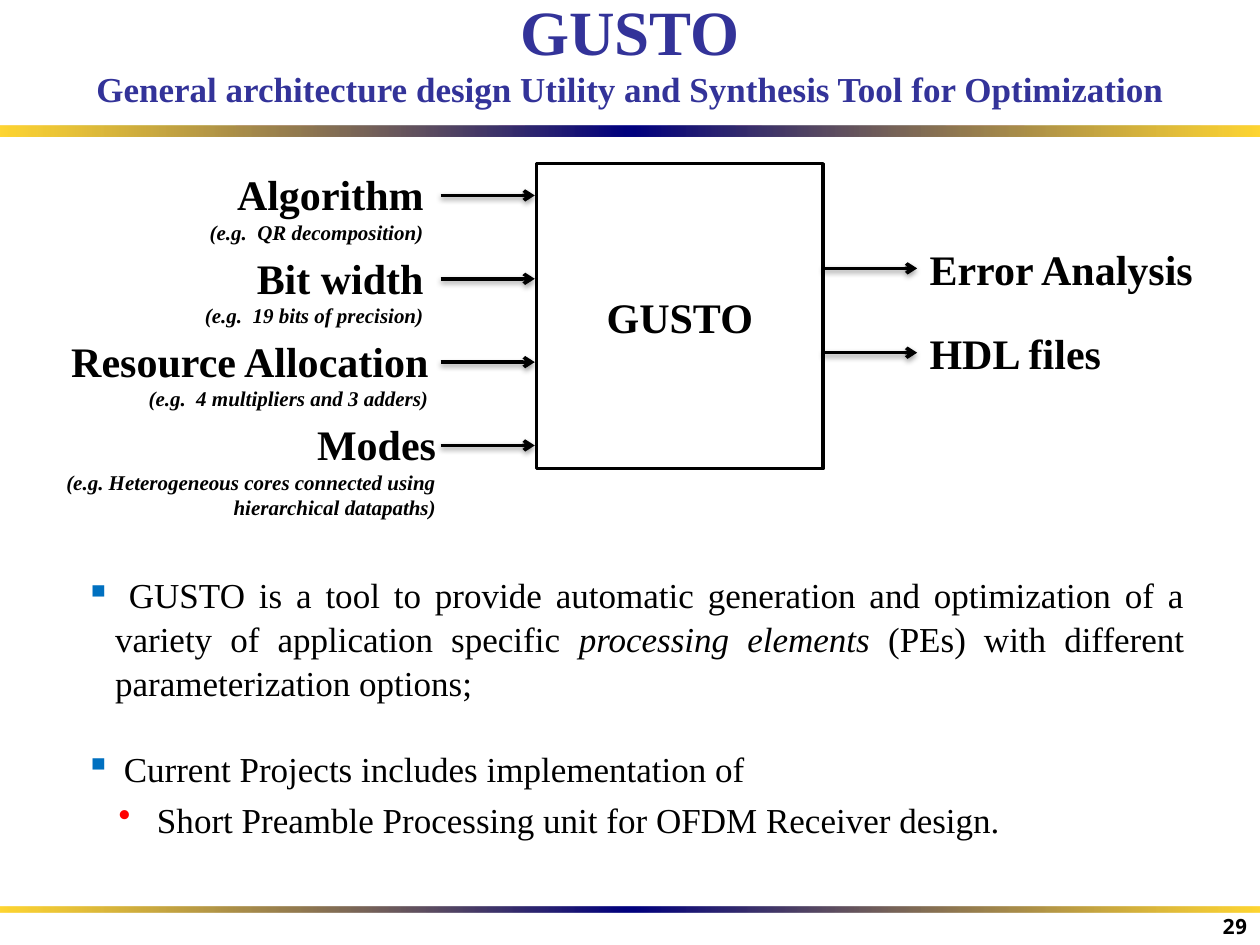
from dataclasses import dataclass

from lxml import etree
from pptx import Presentation
from pptx.dml.color import RGBColor
from pptx.enum.shapes import MSO_CONNECTOR, MSO_SHAPE
from pptx.enum.text import MSO_ANCHOR, MSO_AUTO_SIZE, PP_ALIGN
from pptx.oxml.ns import qn
from pptx.slide import Slide
from pptx.text.text import TextFrame, _Paragraph, _Run
from pptx.util import Cm, Pt

RECTANGLE = MSO_SHAPE.RECTANGLE
STRAIGHT = MSO_CONNECTOR.STRAIGHT
TOP, MIDDLE, BOTTOM = MSO_ANCHOR.TOP, MSO_ANCHOR.MIDDLE, MSO_ANCHOR.BOTTOM
LEFT, CENTER, RIGHT = PP_ALIGN.LEFT, PP_ALIGN.CENTER, PP_ALIGN.RIGHT
JUSTIFY = PP_ALIGN.JUSTIFY


@dataclass(frozen=True)
class Theme:
    font: str = "Times New Roman"
    number_font: str = "Noto Sans Mono"
    ink: str = "000000"
    paper: str = "FFFFFF"
    title: str = "333399"
    gold: str = "FFCC00"
    navy: str = "00007F"
    square_bullet: str = "0070C0"
    round_bullet: str = "FF0000"
    title_size: int = 36
    label_size: int = 24
    body_size: int = 20
    hint_size: int = 12


@dataclass(frozen=True)
class ToolInput:
    name: str
    hint: str
    right: float


@dataclass(frozen=True)
class Point:
    phrases: tuple[str, ...]  # every second phrase is italic
    bullet: str
    color: str
    margin: float
    space_before: float = 0


THEME = Theme()
SLIDE_WIDTH, SLIDE_HEIGHT = 25.4, 19.05
ARROW_LENGTH = 1.9
CORE_LEFT, CORE_TOP, CORE_WIDTH, CORE_HEIGHT = 10.82, 3.3, 5.77, 6.15
HANGING = 0.6

INPUTS = (
    ToolInput("Algorithm", "(e.g.  QR decomposition)", 8.79),
    ToolInput("Bit width", "(e.g.  19 bits of precision)", 8.79),
    ToolInput("Resource Allocation", "(e.g.  4 multipliers and 3 adders)", 8.89),
    ToolInput("Modes", "(e.g. Heterogeneous cores connected using "
              "hierarchical datapaths)", 9.04),
)
FIRST_INPUT, INPUT_PITCH, INPUT_WIDTH = 3.94, 1.68, 8.15
OUTPUTS = ("Error Analysis", "HDL files")
FIRST_OUTPUT, OUTPUT_PITCH = 5.41, 1.7

POINTS = (
    Point((" GUSTO is a tool to provide automatic generation and optimization "
           "of a variety of application specific ", "processing elements",
           " (PEs) with different parameterization options;"),
          "▪", THEME.square_bullet, 0.6),
    Point((" Current Projects includes implementation of",),
          "▪", THEME.square_bullet, 0.6, 23.7),
    Point((" Short Preamble Processing unit for OFDM Receiver design.",),
          "•", THEME.round_bullet, 1.27, 4),
)


def rgb(color: str) -> RGBColor:
    return RGBColor.from_string(color)


def style(run: _Run, size: int, color: str = THEME.ink, bold: bool = True,
          italic: bool = False, font: str = THEME.font) -> None:
    run.font.name, run.font.size = font, Pt(size)
    run.font.bold, run.font.italic = bold, italic
    run.font.color.rgb = rgb(color)


def add_text(slide: Slide, left: float, top: float, width: float, height: float,
             text: str, align: PP_ALIGN, anchor: MSO_ANCHOR = TOP) -> TextFrame:
    frame = slide.shapes.add_textbox(
        Cm(left), Cm(top), Cm(width), Cm(height)).text_frame
    frame.word_wrap = True
    frame.vertical_anchor = anchor
    frame.text = text
    for paragraph in frame.paragraphs:
        paragraph.alignment = align
    return frame


def add_color(parent: etree._Element, color: str, alpha: int) -> None:
    node = etree.SubElement(parent, qn("a:srgbClr"), val=color)
    etree.SubElement(node, qn("a:alpha"), val=str(alpha * 1000))


def add_band(slide: Slide, top: float, height: float) -> None:
    """Draw a full-width rule fading from gold to navy and back."""
    band = slide.shapes.add_shape(
        RECTANGLE, 0, Cm(top), Cm(SLIDE_WIDTH), Cm(height))
    band.shadow.inherit = False
    band.line.fill.background()
    band.fill.gradient()
    band.fill.gradient_angle = 0
    stops = band._element.spPr.find(".//" + qn("a:gsLst"))
    for stop in list(stops):
        stops.remove(stop)
    for position, color, alpha in ((0, THEME.gold, 80), (50, THEME.navy, 100),
                                   (100, THEME.gold, 80)):
        stop = etree.SubElement(stops, qn("a:gs"), pos=str(position * 1000))
        add_color(stop, color, alpha)


def add_arrow(slide: Slide, left: float, y: float) -> None:
    arrow = slide.shapes.add_connector(
        STRAIGHT, Cm(left), Cm(y), Cm(left + ARROW_LENGTH), Cm(y))
    arrow.line.color.rgb = rgb(THEME.ink)
    arrow.line.width = Pt(2)
    properties = arrow._element.spPr
    etree.SubElement(properties.find(qn("a:ln")), qn("a:tailEnd"), type="arrow")
    effects = etree.SubElement(properties, qn("a:effectLst"))
    shadow = etree.SubElement(
        effects, qn("a:outerShdw"), blurRad="40000", dist="20000",
        dir="5400000", rotWithShape="0")
    add_color(shadow, THEME.ink, 38)


def add_title(slide: Slide) -> None:
    title = slide.shapes.title
    title.left, title.top, title.width, title.height = (
        Cm(0.64), Cm(0.38), Cm(24.13), Cm(1.96))
    frame = title.text_frame
    frame.auto_size = MSO_AUTO_SIZE.NONE
    frame.vertical_anchor = BOTTOM
    frame.text = ("GUSTO\vGeneral architecture design Utility and "
                  "Synthesis Tool for Optimization")
    frame.paragraphs[0].alignment = CENTER
    for run, size in zip(frame.paragraphs[0].runs,
                         (THEME.title_size, THEME.body_size)):
        style(run, size, THEME.title)


def add_core(slide: Slide) -> None:
    core = slide.shapes.add_shape(RECTANGLE, Cm(CORE_LEFT), Cm(CORE_TOP),
                                  Cm(CORE_WIDTH), Cm(CORE_HEIGHT))
    core.shadow.inherit = False
    core.fill.solid()
    core.fill.fore_color.rgb = rgb(THEME.paper)
    core.line.color.rgb = rgb(THEME.ink)
    core.line.width = Pt(2)
    core.text_frame.text = "GUSTO"
    core.text_frame.vertical_anchor = MIDDLE
    core.text_frame.paragraphs[0].alignment = CENTER
    style(core.text_frame.paragraphs[0].runs[0], THEME.label_size)


def add_input(slide: Slide, item: ToolInput, y: float) -> None:
    frame = add_text(slide, item.right - INPUT_WIDTH, y - 0.66, INPUT_WIDTH, 1.8,
                     f"{item.name}\n{item.hint}", RIGHT)
    name, hint = frame.paragraphs
    style(name.runs[0], THEME.label_size)
    style(hint.runs[0], THEME.hint_size, italic=True)
    add_arrow(slide, CORE_LEFT - ARROW_LENGTH - 0.04, y)


def add_output(slide: Slide, name: str, y: float) -> None:
    start = CORE_LEFT + CORE_WIDTH
    add_arrow(slide, start, y)
    frame = add_text(slide, start + ARROW_LENGTH, y - 0.63, 6.3, 1.27, name, LEFT)
    style(frame.paragraphs[0].runs[0], THEME.label_size)


def write_point(paragraph: _Paragraph, point: Point) -> None:
    properties = paragraph._p.get_or_add_pPr()
    properties.set("marL", str(int(Cm(point.margin))))
    properties.set("indent", str(-int(Cm(HANGING))))
    color = etree.SubElement(properties, qn("a:buClr"))
    etree.SubElement(color, qn("a:srgbClr"), val=point.color)
    etree.SubElement(properties, qn("a:buChar"), char=point.bullet)
    paragraph.alignment = JUSTIFY
    paragraph.line_spacing = 1.05
    if point.space_before:
        paragraph.space_before = Pt(point.space_before)
    for index, phrase in enumerate(point.phrases):
        run = paragraph.add_run()
        run.text = phrase
        style(run, THEME.body_size, bold=False, italic=index % 2 == 1)


def main() -> None:
    deck = Presentation()
    deck.slide_width, deck.slide_height = Cm(SLIDE_WIDTH), Cm(SLIDE_HEIGHT)
    slide = deck.slides.add_slide(deck.slide_layouts[5])
    add_band(slide, 2.53, 0.22)
    add_band(slide, 18.28, 0.11)
    add_title(slide)
    add_core(slide)
    for index, item in enumerate(INPUTS):
        add_input(slide, item, FIRST_INPUT + index * INPUT_PITCH)
    for index, name in enumerate(OUTPUTS):
        add_output(slide, name, FIRST_OUTPUT + index * OUTPUT_PITCH)
    body = add_text(slide, 1.47, 11.4, 22.66, 5.6, "", JUSTIFY)
    for index, point in enumerate(POINTS):
        write_point(body.add_paragraph() if index else body.paragraphs[0], point)
    number = add_text(slide, 20.12, 18.21, 5.28, 0.84, "29", RIGHT, BOTTOM)
    style(number.paragraphs[0].runs[0], THEME.hint_size, font=THEME.number_font)
    deck.save("out.pptx")


if __name__ == "__main__":
    main()
